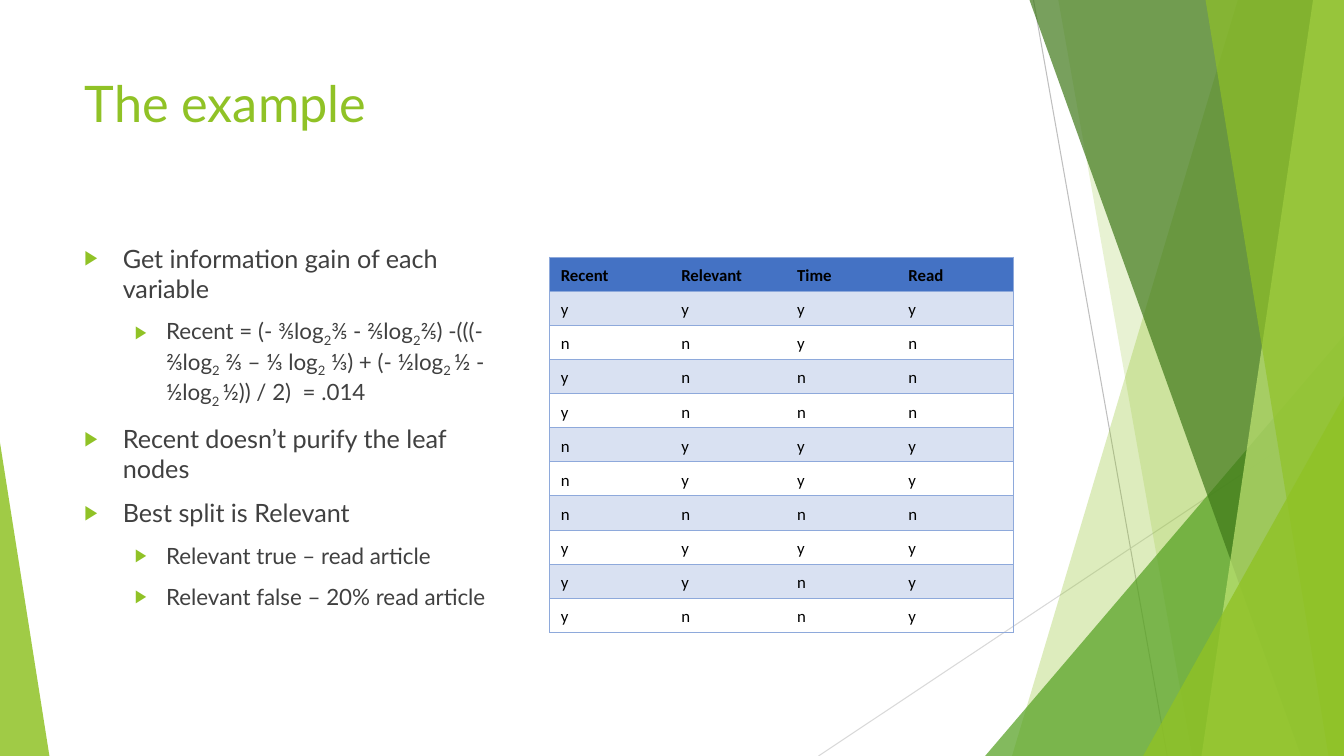
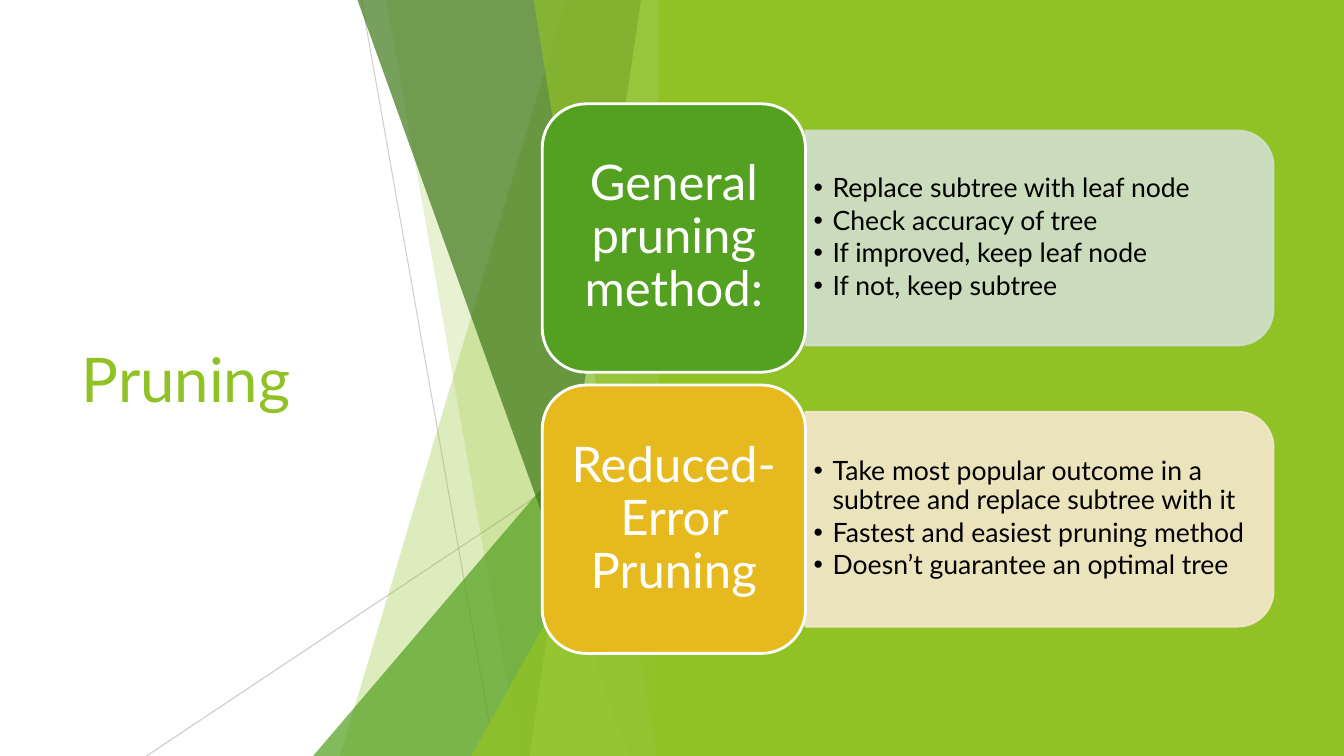
from lxml.etree import SubElement
from pptx import Presentation
from pptx.dml.color import RGBColor
from pptx.enum.shapes import MSO_CONNECTOR, MSO_SHAPE
from pptx.enum.text import MSO_ANCHOR, MSO_AUTO_SIZE, PP_ALIGN
from pptx.oxml.ns import qn
from pptx.util import Inches, Pt

COLORS = {
    "lime": "90C226", "green": "54A021", "forest": "3F7819", "pale": "C0E474",
    "gold": "E6B91E", "sage": "D1DFCD", "cream": "F5E7CD", "white": "FFFFFF",
    "black": "000000", "body": "404040", "gray": "BFBFBF", "silver": "D9D9D9",
    "header": "4472C4", "stripe": "D9E1F2", "rule": "8EA9DB",
}
FONT = "Lato"
TABLE_FONT = "Calibri"
PLAIN_TABLE = "{2D5ABB26-0587-4C30-8999-92F81FD0307C}"

prs = Presentation()
prs.slide_width = Inches(13.333)
prs.slide_height = Inches(7.5)
COL = prs.slide_width / 100
ROW = prs.slide_height / 100

BAND_W = 39.1
FACETS = [
    (31.2, 14.4, 0, "lime", 30),
    (17.85, 27.8, 0, "lime", 20),
    (BAND_W, 12.4, 44.4, "green", 72),
    (15.7, 35.9, 0, "forest", 70),
    (36.8, 28.5, 0, "pale", 70),
    (28.8, 37.95, 0, "lime", 65),
    (BAND_W, 24.15, 52.4, "lime", 80),
]

GAIN_POINTS = [
    (0, "Get information gain of each variable"),
    (1, "Recent = (- ⅗log_2_⅗ - ⅖log_2_⅖) -(((- ⅔log_2_ ⅔ – ⅓ log_2_ ⅓)"
        " + (- ½log_2 _½ - ½log_2 _½)) / 2)  = .014"),
    (0, "Recent doesn’t purify the leaf nodes"),
    (0, "Best split is Relevant"),
    (1, "Relevant true – read article"),
    (1, "Relevant false – 20% read article"),
]
HEADINGS = ["Recent", "Relevant", "Time", "Read"]
READINGS = ["yyyy", "nnyn", "ynnn", "ynnn", "nyyy",
            "nyyy", "nnnn", "yyyy", "yyny", "ynny"]
COLUMN_SHARES = [0.26, 0.25, 0.24, 0.25]

METHODS = [
    ("General pruning method:", "green", "sage",
     ["Replace subtree with leaf node", "Check accuracy of tree",
      "If improved, keep leaf node", "If not, keep subtree"]),
    ("Reduced-Error Pruning", "gold", "cream",
     ["Take most popular outcome in a subtree and replace subtree with it",
      "Fastest and easiest pruning method",
      "Doesn’t guarantee an optimal tree"]),
]


def rgb(name):
    return RGBColor.from_string(COLORS[name])


def emu(box):
    x, y, w, h = box
    return round(x * COL), round(y * ROW), round(w * COL), round(h * ROW)


def fade(shape, alpha):
    if alpha < 100:
        for clr in shape._element.spPr.iter(qn("a:srgbClr")):
            SubElement(clr, qn("a:alpha")).set("val", str(alpha * 1000))


def paint(shape, fill, alpha=100, line=None, width=0):
    shape.shadow.inherit = False
    shape.fill.solid()
    shape.fill.fore_color.rgb = rgb(fill)
    if line:
        shape.line.color.rgb = rgb(line)
        shape.line.width = Pt(width)
    else:
        shape.line.fill.background()
    fade(shape, alpha)


def add_preset(s, kind, box, fill, adj=None, **look):
    shape = s.shapes.add_shape(kind, *emu(box))
    if adj is not None:
        shape.adjustments[0] = adj
    paint(shape, fill, **look)
    return shape


def add_line(s, start, end, color, alpha):
    (x1, y1), (x2, y2) = start, end
    line = s.shapes.add_connector(
        MSO_CONNECTOR.STRAIGHT, round(x1 * COL), round(y1 * ROW),
        round(x2 * COL), round(y2 * ROW))
    line.line.color.rgb = rgb(color)
    line.line.width = Pt(0.75)
    fade(line, alpha)
    SubElement(line._element.spPr, qn("a:effectLst"))


def add_bullet(p, char, indent, hang, color=None, size=100):
    pPr = p._p.get_or_add_pPr()
    pPr.set("marL", str(Inches(indent)))
    pPr.set("indent", str(-Inches(hang)))
    if color:
        clr = SubElement(pPr, qn("a:buClr"))
        SubElement(clr, qn("a:srgbClr")).set("val", COLORS[color])
    SubElement(pPr, qn("a:buSzPct")).set("val", str(size * 1000))
    SubElement(pPr, qn("a:buFont")).set("typeface", "Arial")
    SubElement(pPr, qn("a:buChar")).set("char", char)


def write(p, text, size, color, font=FONT, bold=False, align=PP_ALIGN.LEFT,
          spacing=None, before=0, after=0):
    p.alignment = align
    p.space_before, p.space_after = Pt(before), Pt(after)
    if spacing:
        p.line_spacing = spacing
    for i, part in enumerate(text.split("_")):
        r = p.add_run()
        r.text = part
        r.font.name, r.font.size, r.font.bold = font, Pt(size), bold
        r.font.color.rgb = rgb(color)
        if i % 2:
            r._r.get_or_add_rPr().set("baseline", "-25000")


def set_frame(tf, anchor, side=0.1, edge=0.05):
    tf.word_wrap = True
    tf.auto_size = MSO_AUTO_SIZE.NONE
    tf.vertical_anchor = anchor
    tf.margin_left = tf.margin_right = Inches(side)
    tf.margin_top = tf.margin_bottom = Inches(edge)


def paragraphs(tf, items):
    for i, item in enumerate(items):
        yield (tf.add_paragraph() if i else tf.paragraphs[0]), item


def new_slide(band_x, lines):
    s = prs.slides.add_slide(prs.slide_layouts[5])
    add_facets(s, (band_x, 0, BAND_W, 100), lines)
    return s


def set_title(s, text, box, size, anchor):
    title = s.shapes.title
    title.left, title.top, title.width, title.height = emu(box)
    set_frame(title.text_frame, anchor)
    write(title.text_frame.paragraphs[0], text, size, "lime")


def add_facets(s, box, lines):
    x, y, w, h = box
    right, bottom = x + w, y + h
    add_line(s, (x + 16, y), (x + 25.95, bottom), *lines[0])
    add_line(s, (right, y + 53.73), (x, bottom), *lines[1])
    for top_x, bottom_x, top, fill, alpha in FACETS:
        if top:
            add_preset(s, MSO_SHAPE.ISOSCELES_TRIANGLE,
                       (x + bottom_x, y + top, w - bottom_x, h - top),
                       fill, adj=1, alpha=alpha)
            continue
        points = [(x + top_x, y), (right, y), (right, bottom),
                  (x + bottom_x, bottom)]
        corners = [(round(px * COL), round(py * ROW)) for px, py in points]
        builder = s.shapes.build_freeform(*corners[0], scale=1.0)
        builder.add_line_segments(corners[1:], close=True)
        paint(builder.convert_to_shape(), fill, alpha)


def add_outline(s, box, items):
    tf = s.shapes.add_textbox(*emu(box)).text_frame
    set_frame(tf, MSO_ANCHOR.TOP)
    for p, (level, text) in paragraphs(tf, items):
        p.level = level
        write(p, text, 16 if level else 18, "body", before=10)
        indent, hang = (0.81, 0.31) if level else (0.38, 0.38)
        add_bullet(p, "▶", indent, hang, "lime", 80)


def set_borders(cell, sides):
    tcPr = cell._tc.get_or_add_tcPr()
    for i, side in enumerate(sides):
        ln = tcPr.makeelement(qn("a:ln" + side), {"w": str(Pt(0.75))})
        fill = SubElement(ln, qn("a:solidFill"))
        SubElement(fill, qn("a:srgbClr")).set("val", COLORS["rule"])
        tcPr.insert(i, ln)


def add_readings(s, box, rows):
    x, y, w, h = emu(box)
    last = len(rows[0]) - 1
    table = s.shapes.add_table(len(rows), last + 1, x, y, w, h).table
    table._tbl.tblPr.find(qn("a:tableStyleId")).text = PLAIN_TABLE
    for column, share in zip(table.columns, COLUMN_SHARES):
        column.width = round(w * share)
    for i, row in enumerate(rows):
        table.rows[i].height = round(h / len(rows))
        for j, text in enumerate(row):
            cell = table.cell(i, j)
            cell.vertical_anchor = MSO_ANCHOR.BOTTOM
            cell.margin_left = cell.margin_right = Inches(0.11)
            cell.margin_top = cell.margin_bottom = Inches(0.05)
            write(cell.text_frame.paragraphs[0], text, 12, "black",
                  font=TABLE_FONT, bold=i == 0)
            if i % 2 or i == 0:
                cell.fill.solid()
                cell.fill.fore_color.rgb = rgb("stripe" if i else "header")
            else:
                cell.fill.background()
            sides = ["L"] * (j == 0) + ["R"] * (j == last) + ["T", "B"]
            set_borders(cell, sides)


def add_method(s, box, name, tile_fill, panel_fill, points):
    x, y, w, h = box
    tile_w = w * 0.36
    panel_box = (x + tile_w, y + h * 0.1, w - tile_w, h * 0.8)
    panel = add_preset(s, MSO_SHAPE.ROUND_2_SAME_RECTANGLE, panel_box,
                       panel_fill, alpha=90, line=panel_fill, width=1.5)
    left, top, width, height = emu(panel_box)
    panel.left = left + (width - height) // 2
    panel.top = top + (height - width) // 2
    panel.width, panel.height = height, width
    panel.rotation = 90

    text_box = (*panel_box[:2], panel_box[2] * 0.98, panel_box[3])
    tf = s.shapes.add_textbox(*emu(text_box)).text_frame
    set_frame(tf, MSO_ANCHOR.MIDDLE, 0.08, 0.04)
    for p, text in paragraphs(tf, points):
        write(p, text, 19, "black", spacing=0.9, after=2.8)
        add_bullet(p, "•", 0.19, 0.19)

    tile = add_preset(s, MSO_SHAPE.ROUNDED_RECTANGLE, (x, y, tile_w, h),
                      tile_fill, line="white", width=2)
    set_frame(tile.text_frame, MSO_ANCHOR.MIDDLE, 0.15, 0.07)
    write(tile.text_frame.paragraphs[0], name, 35, "white",
          align=PP_ALIGN.CENTER, spacing=0.9)


def example_slide():
    s = new_slide(60.9, [("gray", 100), ("silver", 100)])
    add_preset(s, MSO_SHAPE.ISOSCELES_TRIANGLE, (0, 58.53, 3.68, 41.47),
               "lime", adj=0, alpha=85)
    set_title(s, "The example", (5.55, 8.93, 70.5, 19.2), 36, MSO_ANCHOR.TOP)
    add_outline(s, (5.55, 31.47, 32.48, 54.67), GAIN_POINTS)
    add_readings(s, (40.9, 34, 34.5, 49.7), [HEADINGS, *READINGS])


def pruning_slide():
    s = new_slide(10.9, [("gray", 75), ("gray", 80)])
    add_preset(s, MSO_SHAPE.RECTANGLE, (49, 0, 51, 100), "lime")
    set_title(s, "Pruning", (5.33, 20.13, 29.1, 59.73), 44, MSO_ANCHOR.MIDDLE)
    for i, method in enumerate(METHODS):
        add_method(s, (40.35, 13.73 + i * 37.2, 54.4, 35.5), *method)


def main():
    example_slide()
    pruning_slide()
    prs.save("out.pptx")


if __name__ == "__main__":
    main()
